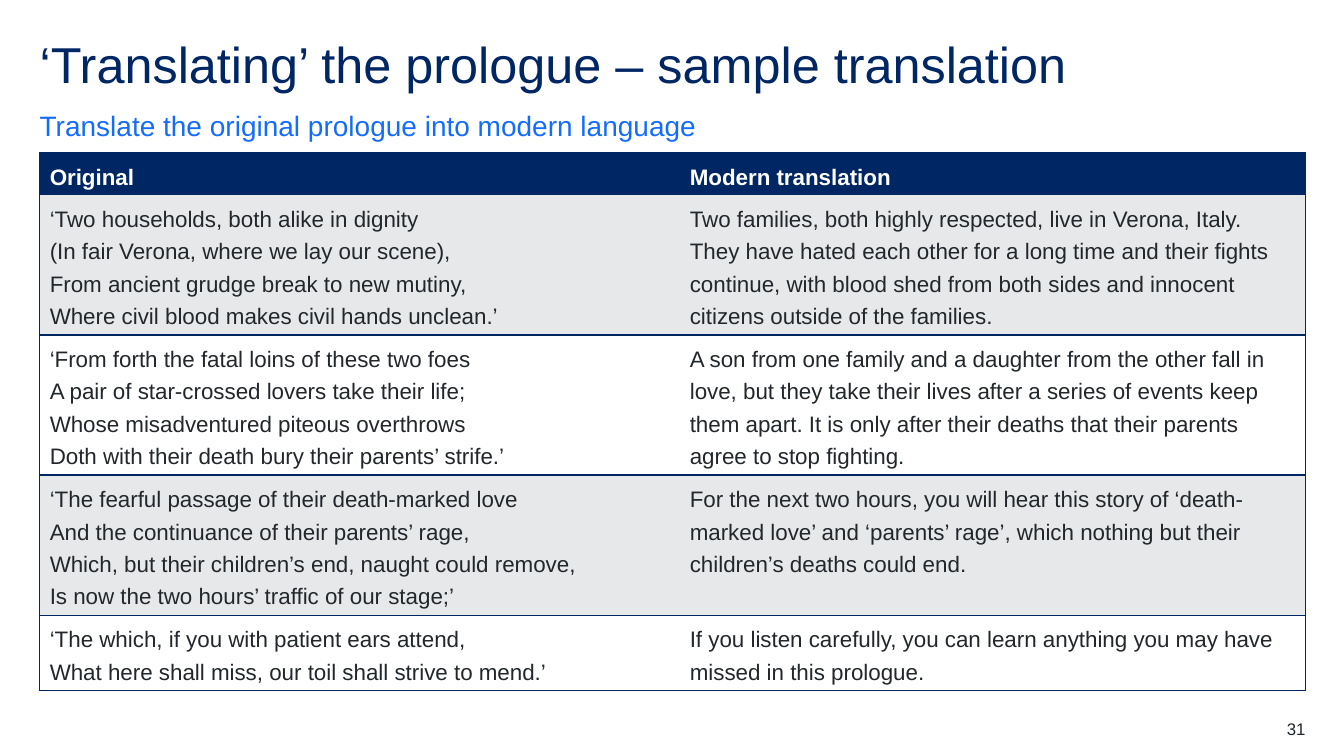
from dataclasses import dataclass

import pptx
import pptx.dml.color
import pptx.enum.text
import pptx.oxml.ns
import pptx.util
from lxml import etree
from pptx.util import Cm

FONT = "Arial"
NAVY = "002664"
BLUE = "146CFD"
INK = "22272B"
GREY = "E7E8EA"
WHITE = "FFFFFF"
LEFT = 1.0
WIDTH = 31.9
HEADER_HEIGHT = 1.05
PADDING = 0.25
LINE_HEIGHT = 0.82
Align = pptx.enum.text.PP_ALIGN
Anchor = pptx.enum.text.MSO_ANCHOR


@dataclass(frozen=True)
class Style:
    size: float
    colour: str
    bold: bool = False
    spacing: float = 1.0
    align: Align = Align.LEFT


@dataclass(frozen=True)
class Passage:
    verse: tuple[str, ...]
    modern: str


TITLE = Style(36, NAVY, spacing=0.9)
SUBTITLE = Style(20, BLUE, spacing=1.5)
HEADER = Style(16, WHITE, bold=True, spacing=1.3)
BODY = Style(16, INK, spacing=1.3)
NUMBER = Style(12, INK, align=Align.RIGHT)

PASSAGES = (
    Passage(
        (
            "‘Two households, both alike in dignity",
            "(In fair Verona, where we lay our scene),",
            "From ancient grudge break to new mutiny,",
            "Where civil blood makes civil hands unclean.’",
        ),
        "Two families, both highly respected, live in Verona, Italy. They have hated each other "
        "for a long time and their fights continue, with blood shed from both sides and innocent "
        "citizens outside of the families.",
    ),
    Passage(
        (
            "‘From forth the fatal loins of these two foes",
            "A pair of star-crossed lovers take their life;",
            "Whose misadventured piteous overthrows",
            "Doth with their death bury their parents’ strife.’",
        ),
        "A son from one family and a daughter from the other fall in love, but they take their "
        "lives after a series of events keep them apart. It is only after their deaths that "
        "their parents agree to stop fighting.",
    ),
    Passage(
        (
            "‘The fearful passage of their death-marked love",
            "And the continuance of their parents’ rage,",
            "Which, but their children’s end, naught could remove,",
            "Is now the two hours’ traffic of our stage;’",
        ),
        "For the next two hours, you will hear this story of ‘death-marked love’ and "
        "‘parents’ rage’, which nothing but their children’s deaths could end.",
    ),
    Passage(
        (
            "‘The which, if you with patient ears attend,",
            "What here shall miss, our toil shall strive to mend.’",
        ),
        "If you listen carefully, you can learn anything you may have missed in this prologue.",
    ),
)


def rgb(colour: str) -> pptx.dml.color.RGBColor:
    return pptx.dml.color.RGBColor.from_string(colour)


def write(frame: pptx.text.text.TextFrame, lines: tuple[str, ...], style: Style) -> None:
    for index, line in enumerate(lines):
        para = frame.add_paragraph() if index else frame.paragraphs[0]
        para.alignment = style.align
        para.line_spacing = style.spacing
        para.space_before = para.space_after = pptx.util.Pt(0)
        span = para.add_run()
        span.text = line
        span.font.name = FONT
        span.font.size = pptx.util.Pt(style.size)
        span.font.bold = style.bold
        span.font.color.rgb = rgb(style.colour)


def set_text_box(
    box: pptx.shapes.autoshape.Shape,
    place: tuple[float, float, float, float],
    text: str,
    style: Style,
    anchor: Anchor = Anchor.TOP,
) -> None:
    box.left, box.top, box.width, box.height = map(Cm, place)
    frame = box.text_frame
    frame.word_wrap = True
    frame.auto_size = pptx.enum.text.MSO_AUTO_SIZE.NONE
    frame.vertical_anchor = anchor
    frame.margin_left = frame.margin_right = frame.margin_top = frame.margin_bottom = 0
    write(frame, (text,), style)


def set_borders(cell: pptx.table._Cell, visible: str) -> None:
    properties = cell._tc.get_or_add_tcPr()
    qualified = pptx.oxml.ns.qn
    for side in "LRTB":
        line = etree.SubElement(properties, qualified(f"a:ln{side}"), w="12700")
        if side in visible:
            fill = etree.SubElement(line, qualified("a:solidFill"))
            etree.SubElement(fill, qualified("a:srgbClr"), val=NAVY)
        else:
            etree.SubElement(line, qualified("a:noFill"))


def fill_row(
    table: pptx.table.Table, index: int, texts: tuple[tuple[str, ...], ...], style: Style, fill: str
) -> None:
    for column, (lines, visible) in enumerate(zip(texts, ("LTB", "RTB"))):
        cell = table.cell(index, column)
        set_borders(cell, visible)
        cell.fill.solid()
        cell.fill.fore_color.rgb = rgb(fill)
        write(cell.text_frame, lines, style)


def add_translation_table(page: pptx.slide.Slide) -> None:
    heights = [HEADER_HEIGHT] + [PADDING + LINE_HEIGHT * len(item.verse) for item in PASSAGES]
    table = page.shapes.add_table(
        len(heights), 2, Cm(LEFT), Cm(3.84), Cm(WIDTH), Cm(sum(heights))
    ).table
    for column, width in zip(table.columns, (16.13, 15.77)):
        column.width = Cm(width)
    for row, height in zip(table.rows, heights):
        row.height = Cm(height)
    fill_row(table, 0, (("Original",), ("Modern translation",)), HEADER, NAVY)
    for index, item in enumerate(PASSAGES, start=1):
        fill_row(table, index, (item.verse, (item.modern,)), BODY, GREY if index % 2 else WHITE)


def main() -> None:
    deck = pptx.Presentation()
    deck.slide_width, deck.slide_height = Cm(33.87), Cm(19.05)
    page = deck.slides.add_slide(deck.slide_layouts.get_by_name("Title Only"))
    set_text_box(
        page.shapes.title,
        (LEFT, 1.0, WIDTH, 1.52),
        "‘Translating’ the prologue – sample translation",
        TITLE,
    )
    add_translation_table(page)
    set_text_box(
        page.shapes.add_textbox(0, 0, 0, 0),
        (LEFT, 2.72, WIDTH, 0.86),
        "Translate the original prologue into modern language",
        SUBTITLE,
        Anchor.BOTTOM,
    )
    set_text_box(page.shapes.add_textbox(0, 0, 0, 0), (30.9, 18.11, 2.0, 0.51), "31", NUMBER)
    deck.save("out.pptx")


if __name__ == "__main__":
    main()
